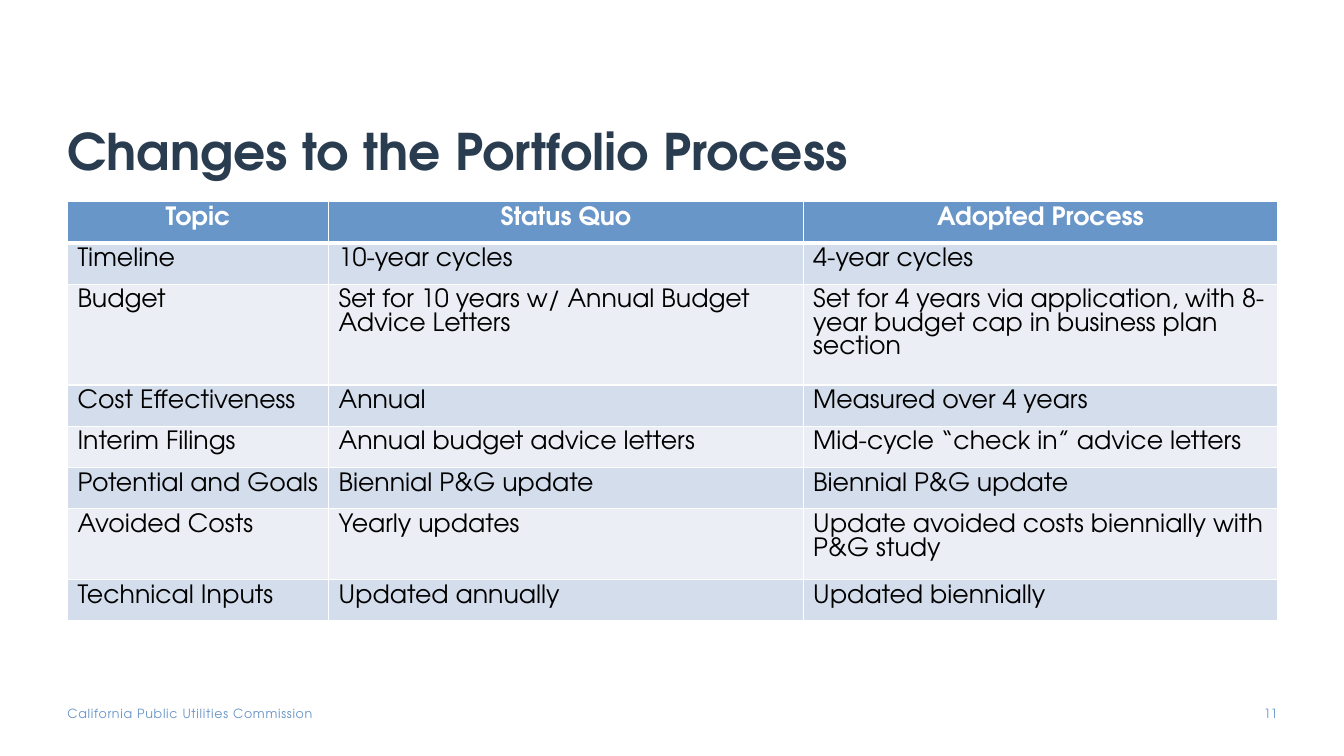
from dataclasses import dataclass

from lxml.etree import SubElement
from pptx import Presentation
from pptx.dml.color import RGBColor as RGB
from pptx.enum.text import MSO_ANCHOR as Anchor, PP_ALIGN as Align
from pptx.oxml.ns import qn
from pptx.util import Cm, Pt


@dataclass(frozen=True)
class Theme:
    face: str = "TeX Gyre Adventor"
    navy: str = "2A3C50"
    blue: str = "6996C9"
    odd: str = "D4DDEB"
    even: str = "EBEFF5"
    white: str = "FFFFFF"
    black: str = "000000"
    title: int = 36
    body: int = 18
    small: int = 9
    rule: int = 1
    thick: int = 3


THEME = Theme()

ROWS = [
    ("Topic", "Status Quo", "Adopted Process"),
    ("Timeline", "10-year cycles", "4-year cycles"),
    ("Budget", "Set for 10 years w/ Annual Budget Advice Letters",
     "Set for 4 years via application, with 8-year budget cap in business plan section"),
    ("Cost Effectiveness", "Annual", "Measured over 4 years"),
    ("Interim Filings", "Annual budget advice letters",
     "Mid-cycle “check in” advice letters"),
    ("Potential and Goals", "Biennial P&G update", "Biennial P&G update"),
    ("Avoided Costs", "Yearly updates",
     "Update avoided costs biennially with P&G study"),
    ("Technical Inputs", "Updated annually", "Updated biennially"),
]


def style(para, size, color, bold=False, align=Align.LEFT):
    para.alignment = align
    font = para.font
    font.name, font.size, font.bold = THEME.face, Pt(size), bold
    font.color.rgb = RGB.from_string(color)


def add_text(slide, box, text):
    """Add a wrapped text box without insets; return its frame and paragraph."""
    frame = slide.shapes.add_textbox(*box).text_frame
    frame.word_wrap = True
    frame.margin_left = frame.margin_right = 0
    frame.margin_top = frame.margin_bottom = 0
    para = frame.paragraphs[0]
    para.text = text
    return frame, para


def add_title(slide, box, text):
    frame, para = add_text(slide, box, text)
    frame.vertical_anchor = Anchor.BOTTOM
    frame.margin_top = frame.margin_bottom = Cm(0.13)
    frame.margin_right = Cm(0.25)
    para.line_spacing = 0.9
    style(para, THEME.title, THEME.navy, bold=True)


def add_edges(cell, top, bottom):
    """Draw white cell borders; top and bottom are widths in points."""
    props = cell._tc.get_or_add_tcPr()
    widths = {"L": THEME.rule, "R": THEME.rule, "T": top, "B": bottom}
    for side, width in widths.items():
        line = SubElement(props, qn(f"a:ln{side}"), w=str(Pt(width)))
        fill = SubElement(line, qn("a:solidFill"))
        SubElement(fill, qn("a:srgbClr"), val=THEME.white)


def add_grid(slide, box, rows):
    left, top, width, height = box
    table = slide.shapes.add_table(len(rows), len(rows[0]), *box).table
    topic = Cm(6.58)
    table.columns[0].width = topic
    for col in (1, 2):
        table.columns[col].width = (width - topic) // 2
    for r, texts in enumerate(rows):
        table.rows[r].height = height // len(rows)
        head = r == 0
        shade = THEME.blue if head else THEME.odd if r % 2 else THEME.even
        for c, text in enumerate(texts):
            cell = table.cell(r, c)
            add_edges(cell, THEME.thick if r == 1 else THEME.rule,
                      THEME.thick if head else THEME.rule)
            cell.fill.solid()
            cell.fill.fore_color.rgb = RGB.from_string(shade)
            cell.text = text
            style(cell.text_frame.paragraphs[0], THEME.body,
                  THEME.white if head else THEME.black, head,
                  Align.CENTER if head else Align.LEFT)


def add_foot(slide, box, owner, page):
    left, top, width, height = box
    _, para = add_text(slide, (left, top, Cm(8.15), height), owner)
    style(para, THEME.small, THEME.blue)
    para.runs[0].font._element.set("spc", "50")
    num = Cm(1.07)
    _, para = add_text(slide, (left + width - num, top, num, height), page)
    style(para, THEME.small, THEME.blue, align=Align.RIGHT)


def main():
    deck = Presentation()
    deck.slide_width, deck.slide_height = Cm(33.87), Cm(19.05)
    slide = deck.slides.add_slide(deck.slide_layouts[6])
    left, width = Cm(1.7), Cm(30.5)
    add_title(slide, (left, Cm(1.02), width, Cm(3.68)),
              "Changes to the Portfolio Process")
    add_grid(slide, (left, Cm(5.08), width, Cm(8.32)), ROWS)
    add_foot(slide, (left, Cm(17.78), width, Cm(0.45)),
             "California Public Utilities Commission", "11")
    deck.save("out.pptx")


if __name__ == "__main__":
    main()
